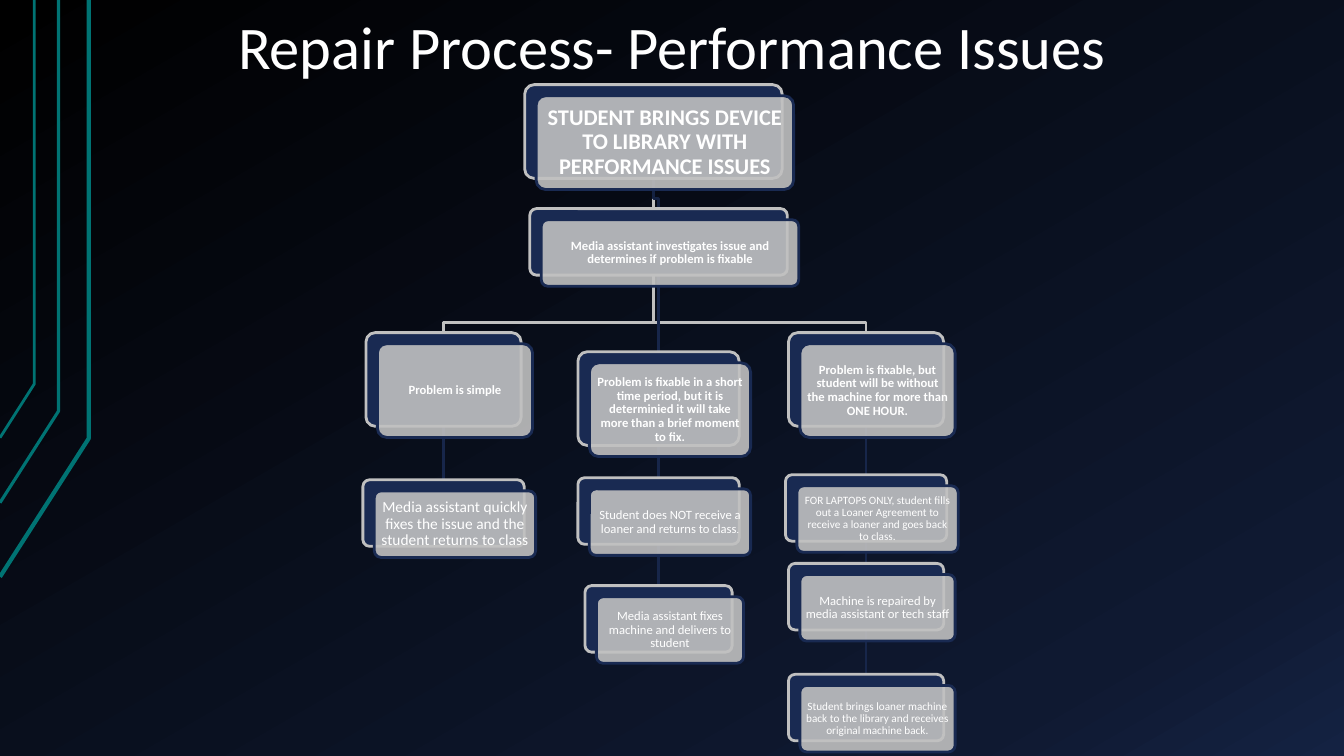
from lxml.etree import SubElement
from pptx import Presentation
from pptx.dml.color import RGBColor as RGB
from pptx.enum.shapes import MSO_CONNECTOR as LINK, MSO_SHAPE as SHAPE
from pptx.enum.text import MSO_ANCHOR as ANCHOR, PP_ALIGN as ALIGN
from pptx.oxml.ns import qn
from pptx.util import Inches, Pt

THEME = {
    "font": "Calibri", "text": RGB.from_string("FFFFFF"),
    "navy": RGB.from_string("192A52"), "silver": RGB.from_string("C0C0C0"),
    "link": RGB.from_string("17264A"), "root_link": RGB.from_string("142242"),
    "rail": RGB.from_string("007373"),
    "backdrop": [(0, "000000"), (85, "0F1931"), (100, "142242")],
    "title": 43.2, "root": 16, "large": 11, "body": 9, "small": 8, "stop": 7,
}

deck = Presentation()
deck.slide_width, deck.slide_height = Inches(13.33), Inches(7.5)
COL, ROW = deck.slide_width / 100, deck.slide_height / 100
slide = deck.slides.add_slide(deck.slide_layouts[6])

backdrop = slide.background.fill
backdrop.gradient()
backdrop.gradient_angle = 300
stops = slide.element.find(".//" + qn("a:gsLst"))
stops.clear()
for share, colour in THEME["backdrop"]:
    stop = SubElement(stops, qn("a:gs"), pos=str(share * 1000))
    SubElement(stop, qn("a:srgbClr"), val=colour)


def draw_path(points, colour, weight):
    points = [(round(x * COL), round(y * ROW)) for x, y in points]
    builder = slide.shapes.build_freeform(*points[0], scale=1.0)
    builder.add_line_segments(points[1:], close=False)
    path = builder.convert_to_shape()
    path.shadow.inherit = False
    path.fill.background()
    path.line.color.rgb = colour
    path.line.width = Pt(weight)
    return path


def write(shape, text, size, bold, anchor, margins):
    frame = shape.text_frame
    frame.word_wrap = True
    frame.vertical_anchor = anchor
    frame.margin_left = frame.margin_right = margins[0]
    frame.margin_top = frame.margin_bottom = margins[1]
    frame.text = text
    paragraph = frame.paragraphs[0]
    paragraph.alignment = ALIGN.CENTER
    paragraph.line_spacing = 0.9
    font = paragraph.runs[0].font
    font.name, font.size, font.bold = THEME["font"], Pt(size), bold
    font.color.rgb = THEME["text"]
    return paragraph


for edge, start, bend, weight in [(6.6, 76.3, 58, 3), (4.35, 66.5, 54.4, 2.25), (2.55, 57.9, 50.8, 2)]:
    draw_path([(0, start), (edge, bend), (edge, 0)], THEME["rail"], weight)

title = slide.shapes.add_textbox(*map(round, (7.5 * COL, 1.07 * ROW, 85 * COL, 10.8 * ROW)))
write(title, "Repair Process- Performance Issues", THEME["title"], False,
      ANCHOR.BOTTOM, (Inches(0.13), Inches(0.07)))

LEFT, MIDDLE, RIGHT = 33, 49, 64.44
TALL, SHORT = 12.4, 8.8
STEPS = {
    "arrival": (48.62, 11.2, 19.16, TALL, "root", True,
                "STUDENT BRINGS DEVICE TO LIBRARY WITH PERFORMANCE ISSUES"),
    "inspection": (MIDDLE, 27.6, 19.16, SHORT, "body", True,
                   "Media assistant investigates issue and determines if problem is fixable"),
    "brief": (MIDDLE, 46.53, 12, TALL, "body", True,
              "Problem is fixable in a short time period, but it is determinied "
              "it will take more than a brief moment to fix."),
    "no_loaner": (MIDDLE, 63.2, 12, SHORT, "body", False,
                  "Student does NOT receive a loaner and returns to class"),
    "delivery": (MIDDLE, 77.47, 10.95, SHORT, "body", False,
                 "Media assistant fixes machine and delivers to student"),
    "simple": (LEFT, 44, 11.55, TALL, "body", True, "Problem is simple"),
    "quick_fix": (LEFT, 63.47, 12, SHORT, "large", False,
                  "Media assistant quickly fixes the issue and the student returns to class"),
    "lengthy": (RIGHT, 44, 11.55, TALL, "body", True,
                "Problem is fixable, but student will be without the machine for more than ONE HOUR."),
    "loaner": (RIGHT, 62.8, 12, SHORT, "small", False,
               "FOR LAPTOPS ONLY, student fills out a Loaner Agreement to receive a loaner "
               "and goes back to class."),
    "repair": (RIGHT, 74.53, 11.55, SHORT, "body", False,
               "Machine is repaired by media assistant or tech staff"),
    "exchange": (RIGHT, 89.2, 11.55, SHORT, "small", False,
                 "Student brings loaner machine back to the library and receives original machine back."),
}

plates, labels = {}, {}
for step, (centre, top, width, height, size, bold, text) in STEPS.items():
    for shift, fill, edge in [(0, "navy", "silver"), (1, "silver", "navy")]:
        card = slide.shapes.add_shape(
            SHAPE.ROUNDED_RECTANGLE,
            round((centre - width / 2 + 0.85 * shift) * COL), round((top + 1.47 * shift) * ROW),
            round(width * COL), round(height * ROW))
        card.adjustments[0] = 0.1
        card.shadow.inherit = False
        card.fill.solid()
        card.fill.fore_color.rgb = THEME[fill]
        card.line.color.rgb = THEME[edge]
        card.line.width = Pt(2)
        if shift == 0:
            plates[step] = card
    tint = card.fill._xPr.find(qn("a:solidFill"))[0]
    SubElement(tint, qn("a:alpha"), val="90000")
    inset = Pt(THEME[size] * 0.3)
    labels[step] = write(card, text, THEME[size], bold, ANCHOR.MIDDLE, (inset, inset))

full_stop = labels["no_loaner"].add_run()
full_stop.text = "."
full_stop.font.name, full_stop.font.size = THEME["font"], Pt(THEME["stop"])
full_stop.font.color.rgb = THEME["text"]

FLOW = [
    ("repair", "exchange", "link"), ("loaner", "repair", "link"), ("lengthy", "loaner", "link"),
    ("arrival", "lengthy", "silver"), ("simple", "quick_fix", "link"), ("arrival", "simple", "silver"),
    ("no_loaner", "delivery", "link"), ("inspection", "no_loaner", "link"),
    ("inspection", "brief", "link"), ("arrival", "inspection", "root_link"),
]
for parent, child, colour in FLOW:
    start, top, _, height = STEPS[parent][:4]
    end, arrival_row = STEPS[child][:2]
    if start == end:
        link = slide.shapes.add_connector(LINK.STRAIGHT, 0, 0, 0, 0)
        link.begin_connect(plates[parent], 2)
        link.end_connect(plates[child], 0)
        link.line.color.rgb = THEME[colour]
        link.line.width = Pt(2)
        SubElement(link._element.spPr, qn("a:effectLst"))
    else:
        turn = arrival_row - 1.3
        link = draw_path([(start, top + height), (start, turn), (end, turn), (end, arrival_row)],
                         THEME[colour], 2)
    plates["arrival"]._element.addprevious(link._element)

deck.save("out.pptx")
